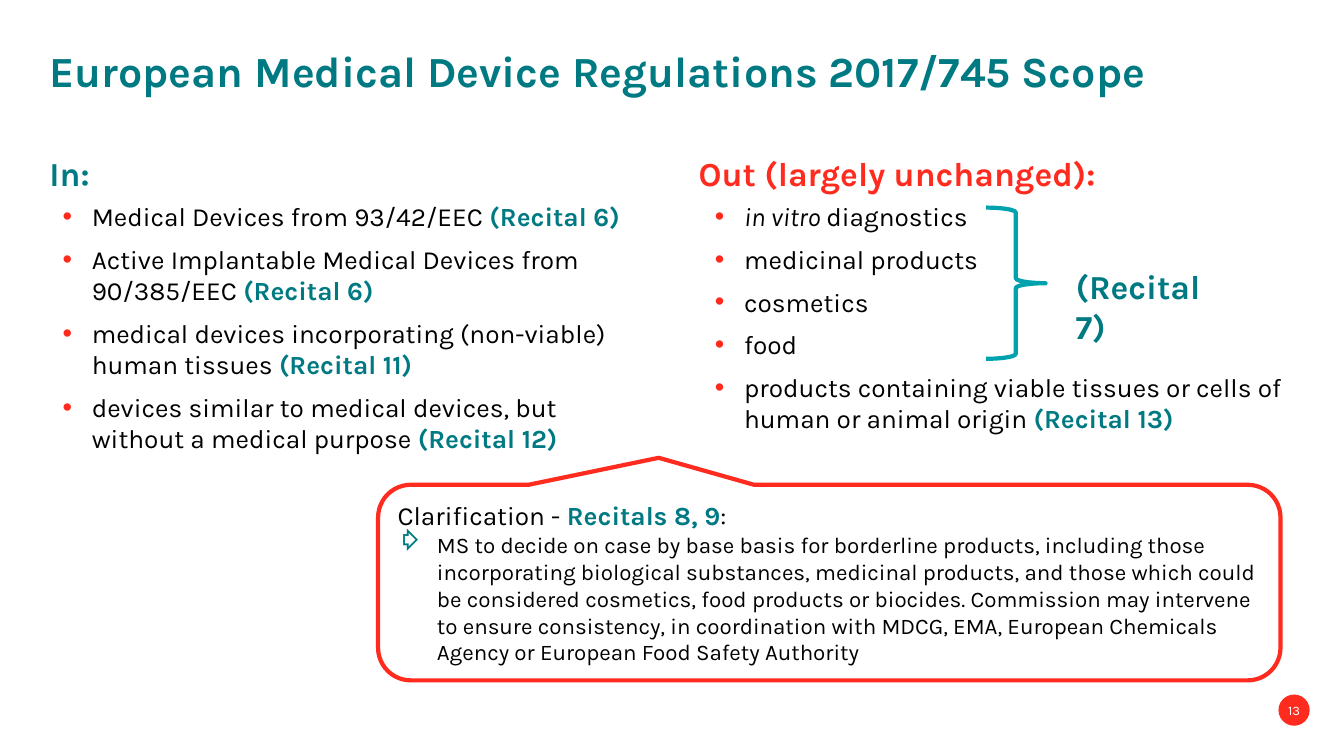
from lxml import etree
from pptx import Presentation
from pptx.dml.color import RGBColor
from pptx.enum.shapes import MSO_SHAPE
from pptx.enum.text import MSO_ANCHOR, MSO_AUTO_SIZE, PP_ALIGN
from pptx.oxml.ns import qn
from pptx.util import Inches, Pt

OVAL = MSO_SHAPE.OVAL
BRACE = MSO_SHAPE.RIGHT_BRACE
CALLOUT = MSO_SHAPE.ROUNDED_RECTANGULAR_CALLOUT
TOP, MIDDLE = MSO_ANCHOR.TOP, MSO_ANCHOR.MIDDLE
LEFT, CENTER = PP_ALIGN.LEFT, PP_ALIGN.CENTER
NO_FIT = MSO_AUTO_SIZE.NONE

FONT = "Karla"
TEAL, AQUA, RED, BLACK, WHITE = "007A82", "00A3AD", "FF2B1F", "000000", "FFFFFF"
LIST_SIZE = 18.7
COMPARISON_LAYOUT = 4

IN_ITEMS = [
    [("Medical Devices from 93/42/EEC ",), ("(Recital 6)", TEAL, True)],
    [("Active Implantable Medical Devices from 90/385/EEC ",), ("(Recital 6)", TEAL, True)],
    [("medical devices incorporating (non-viable) human tissues ",), ("(Recital 11)", TEAL, True)],
    [("devices similar to medical devices, but without a medical purpose ",),
     ("(Recital 12)", TEAL, True)],
]
OUT_ITEMS = [
    [("in vitro ", BLACK, False, True), ("diagnostics",)],
    [("medicinal products",)],
    [("cosmetics",)],
    [("food",)],
    [("products containing viable tissues or cells of human or animal origin ",),
     ("(Recital 13)", TEAL, True)],
]
CLARIFICATION = [("Clarification - ",), ("Recitals 8, 9", TEAL, True), (":",)]
DECISION = (
    "MS to decide on case by base basis for borderline products, including those "
    "incorporating biological substances, medicinal products, and those which could be "
    "considered cosmetics, food products or biocides. Commission may intervene to ensure "
    "consistency, in coordination with MDCG, EMA, European Chemicals Agency or European "
    "Food Safety Authority"
)


def color(value):
    """Turn a hex string into a colour."""
    return RGBColor.from_string(value)


def add_run(paragraph, size, text, text_color=BLACK, bold=False, italic=False):
    """Append one formatted run to a paragraph."""
    run = paragraph.add_run()
    run.text = text
    font = run.font
    font.name, font.size = FONT, Pt(size)
    font.bold, font.italic = bold, italic
    font.color.rgb = color(text_color)


def set_bullet(paragraph, character, bullet_color, indent, hanging, percent=100):
    """Give a paragraph a coloured bullet with a hanging indent."""
    properties = paragraph._p.get_or_add_pPr()
    properties.set("marL", str(Inches(indent)))
    properties.set("indent", str(-Inches(hanging)))
    bullet = etree.SubElement(properties, qn("a:buClr"))
    etree.SubElement(bullet, qn("a:srgbClr"), val=bullet_color)
    etree.SubElement(properties, qn("a:buSzPct"), val=str(percent * 1000))
    etree.SubElement(properties, qn("a:buChar"), char=character)


def place(shape, left, top, width, height):
    """Move and size a shape in inches."""
    shape.left, shape.top = Inches(left), Inches(top)
    shape.width, shape.height = Inches(width), Inches(height)


def prepare_frame(shape, anchor, margin=None):
    """Set wrapping, anchor and margins, and return the text frame."""
    frame = shape.text_frame
    frame.word_wrap, frame.auto_size = True, NO_FIT
    frame.vertical_anchor = anchor
    if margin is not None:
        frame.margin_left = frame.margin_right = Inches(margin)
        frame.margin_top = frame.margin_bottom = Inches(margin)
    return frame


def fill_heading(placeholder, box, text, size, text_color):
    """Fill a placeholder with a bold one-line heading."""
    place(placeholder, *box)
    paragraph = prepare_frame(placeholder, MIDDLE, 0).paragraphs[0]
    paragraph.alignment, paragraph.line_spacing = LEFT, 0.9
    paragraph.space_before = Pt(0)
    add_run(paragraph, size, text, text_color, True)


def fill_list(placeholder, box, items):
    """Fill a placeholder with a red-bulleted list."""
    place(placeholder, *box)
    frame = prepare_frame(placeholder, TOP, 0)
    for index, runs in enumerate(items):
        paragraph = frame.add_paragraph() if index else frame.paragraphs[0]
        paragraph.space_before = Pt(8 if index else 0)
        set_bullet(paragraph, "•", RED, 0.42, 0.29, 104)
        for run in runs:
            add_run(paragraph, LIST_SIZE, *run)


def add_preset(slide, kind, box, fill=None, line=None):
    """Add a preset shape without shadow."""
    shape = slide.shapes.add_shape(kind, *map(Inches, box))
    shape.shadow.inherit = False
    if fill:
        shape.fill.solid()
        shape.fill.fore_color.rgb = color(fill)
    else:
        shape.fill.background()
    if line:
        shape.line.color.rgb = color(line)
        shape.line.width = Pt(3)
    else:
        shape.line.fill.background()
    return shape


def add_clarification(slide):
    """Add the callout that explains borderline products."""
    callout = add_preset(slide, CALLOUT, (3.75, 4.81, 8.95, 1.94), WHITE, RED)
    for index, value in enumerate((-0.189, -0.638, 0.167)):
        callout.adjustments[index] = value
    frame = prepare_frame(callout, MIDDLE)
    opening, decision = frame.paragraphs[0], frame.add_paragraph()
    opening.alignment = decision.alignment = LEFT
    for run in CLARIFICATION:
        add_run(opening, LIST_SIZE, *run)
    set_bullet(decision, "⇨", TEAL, 0.39, 0.39)
    add_run(decision, 16, DECISION)


def add_recital_label(slide):
    """Add the label beside the brace."""
    label = slide.shapes.add_textbox(*map(Inches, (10.57, 2.59, 1.74, 0.91)))
    add_run(prepare_frame(label, TOP).paragraphs[0], 24, "(Recital 7)", TEAL, True)


def add_page_number(slide):
    """Add the round page number."""
    badge = add_preset(slide, OVAL, (12.68, 6.89, 0.31, 0.31), RED)
    paragraph = prepare_frame(badge, MIDDLE, 0).paragraphs[0]
    paragraph.alignment = CENTER
    add_run(paragraph, 9.3, "13", WHITE)


def main():
    """Build and save the scope slide."""
    presentation = Presentation()
    presentation.slide_width, presentation.slide_height = Inches(13.33), Inches(7.5)
    slide = presentation.slides.add_slide(presentation.slide_layouts[COMPARISON_LAYOUT])
    title, in_heading, in_list, out_heading, out_list = slide.placeholders
    fill_heading(title, (0.49, 0.49, 12.35, 0.47),
                 "European Medical Device Regulations 2017/745 Scope", 30.7, TEAL)
    fill_heading(in_heading, (0.49, 1.58, 5.88, 0.32), "In:", 24, TEAL)
    fill_list(in_list, (0.49, 1.99, 5.88, 2.92), IN_ITEMS)
    fill_heading(out_heading, (6.93, 1.58, 5.88, 0.32), "Out (largely unchanged):", 24, RED)
    fill_list(out_list, (6.96, 1.99, 5.88, 3.69), OUT_ITEMS)
    add_preset(slide, BRACE, (9.78, 2.06, 0.59, 1.5), line=AQUA)
    add_recital_label(slide)
    add_clarification(slide)
    add_page_number(slide)
    presentation.save("out.pptx")


if __name__ == "__main__":
    main()
